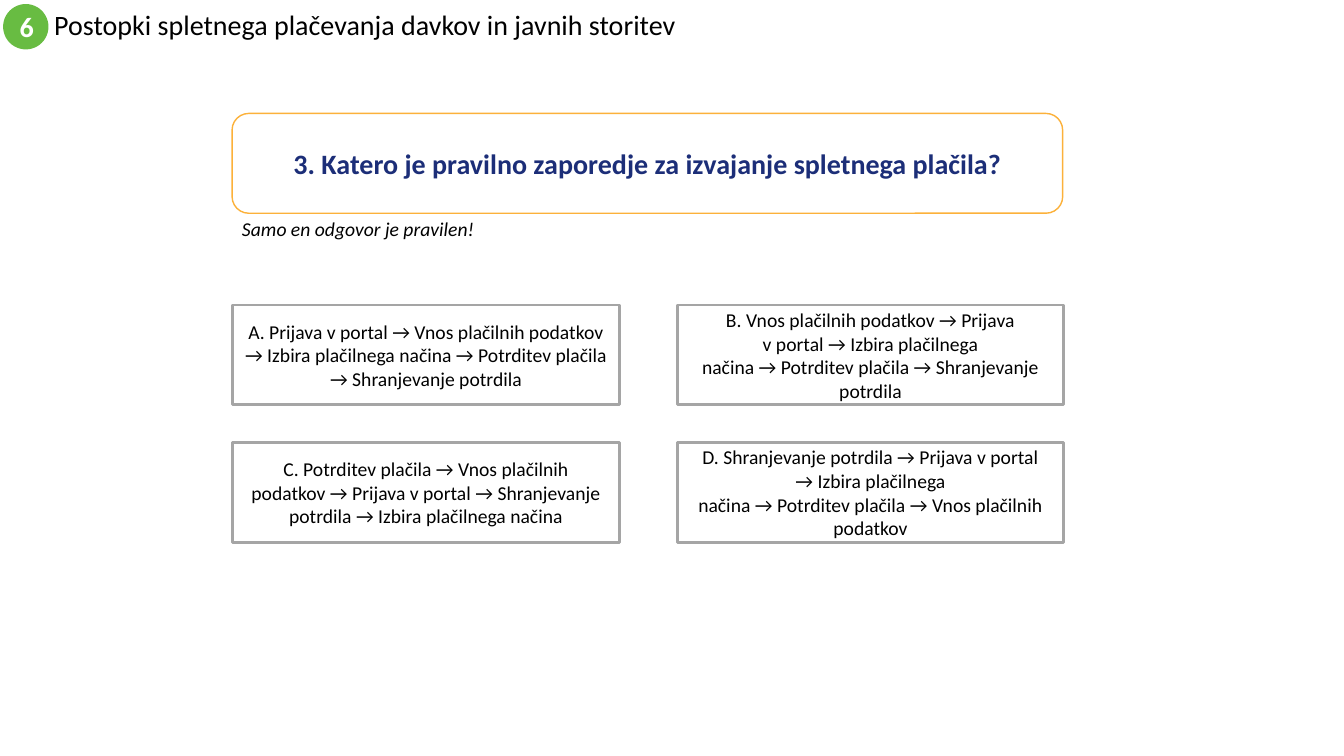
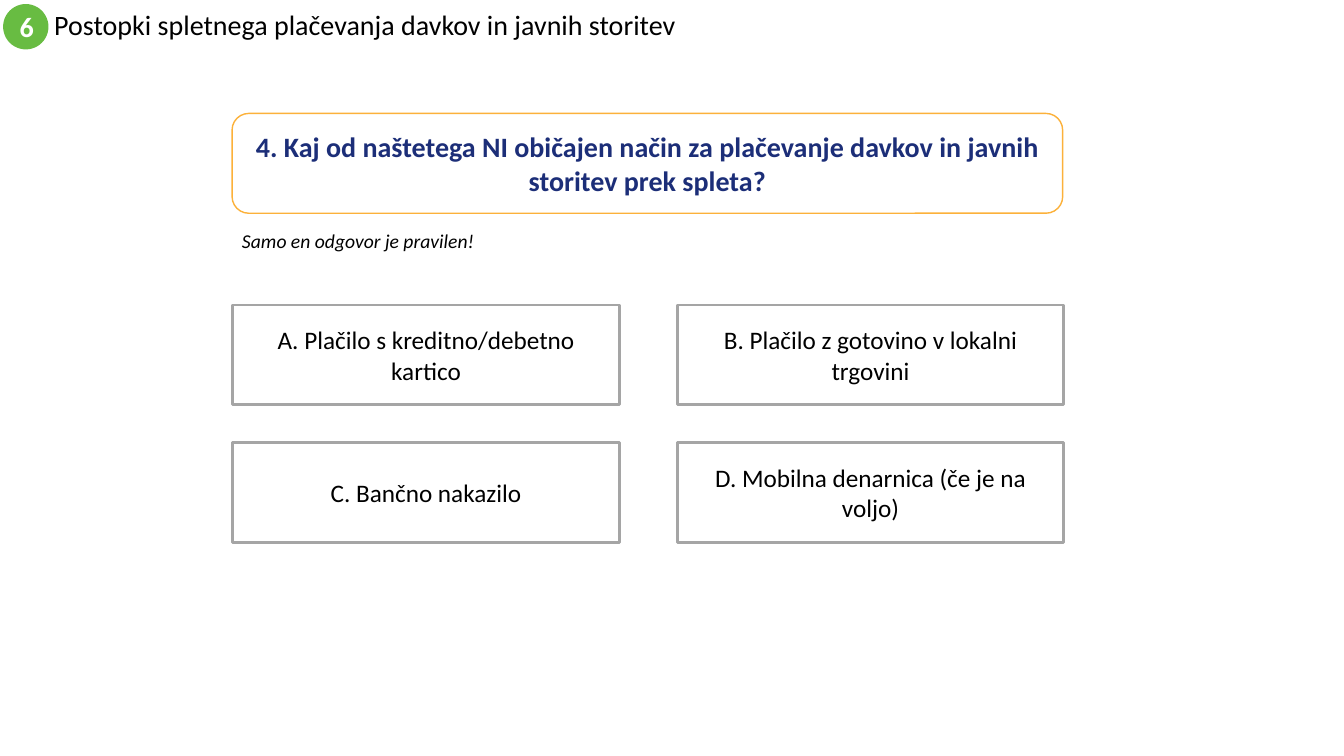
from dataclasses import dataclass

from pptx import Presentation
from pptx.dml.color import RGBColor
from pptx.enum.shapes import MSO_SHAPE
from pptx.enum.text import MSO_ANCHOR, MSO_AUTO_SIZE, PP_ALIGN
from pptx.shapes.autoshape import Shape
from pptx.slide import Slide
from pptx.util import Pt

OVAL, RECT, ROUND = MSO_SHAPE.OVAL, MSO_SHAPE.RECTANGLE, MSO_SHAPE.ROUNDED_RECTANGLE
MIDDLE, TOP = MSO_ANCHOR.MIDDLE, MSO_ANCHOR.TOP
LEFT, CENTER = PP_ALIGN.LEFT, PP_ALIGN.CENTER
FIXED, GROW = MSO_AUTO_SIZE.NONE, MSO_AUTO_SIZE.SHAPE_TO_FIT_TEXT

FONT = "Calibri"
BLACK, WHITE, NAVY = "000000", "FFFFFF", "1C2E78"
GREEN, AMBER, GRAY = "68BC42", "FCB13A", "A5A5A5"

TITLE = "Postopki spletnega plačevanja davkov in javnih storitev"
HINT = "Samo en odgovor je pravilen!"
TIE, HARD = "~", chr(160)
COLS = 2


@dataclass(frozen=True)
class Box:
    """Place and size in points."""
    left: float
    top: float
    width: float
    height: float

    def lengths(self) -> tuple[Pt, Pt, Pt, Pt]:
        """Give the four values as lengths."""
        return Pt(self.left), Pt(self.top), Pt(self.width), Pt(self.height)


@dataclass(frozen=True)
class Style:
    """Look of a text."""
    size: float
    color: str = BLACK
    bold: bool = False
    italic: bool = False
    align: PP_ALIGN = CENTER
    anchor: MSO_ANCHOR = MIDDLE


@dataclass(frozen=True)
class Quiz:
    """One question with its answers, where a tie marks a hard space."""
    ask: str
    hint: Box
    size: float
    answers: tuple[str, ...]


HEAD_BOX = Box(31.5, 2.9, 576, 32.4)
BADGE_BOX = Box(2.2, 2.9, 32.4, 32.4)
ASK_BOX = Box(165.8, 81, 593.3, 71.3)
GRID = Box(166.3, 217.9, 276, 71.3)
STEP_X, STEP_Y = 317.5, 98.2

HEAD = Style(20, align=LEFT)
BADGE = Style(20, WHITE, bold=True)
ASK = Style(20, NAVY, bold=True)
NOTE = Style(14, italic=True, align=LEFT, anchor=TOP)

QUIZZES = (
    Quiz(
        "3. Katero je pravilno zaporedje za izvajanje spletnega plačila?",
        Box(165.8, 151.5, 199.4, 24.5),
        14,
        (
            "A. Prijava v~portal → Vnos~plačilnih podatkov → Izbira plačilnega načina "
            "→ Potrditev~plačila → Shranjevanje potrdila",
            "B. Vnos~plačilnih podatkov →~Prijava v~portal~→~Izbira plačilnega "
            "načina~→~Potrditev~plačila~→ Shranjevanje potrdila",
            "C.~Potrditev~plačila~→ Vnos~plačilnih podatkov~→~Prijava "
            "v~portal~→~Shranjevanje potrdila~→ Izbira plačilnega načina",
            "D.~Shranjevanje potrdila~→ Prijava v~portal →~Izbira plačilnega "
            "načina~→~Potrditev~plačila~→ Vnos~plačilnih podatkov",
        ),
    ),
    Quiz(
        "4. Kaj~od naštetega~NI običajen način za plačevanje davkov in javnih "
        "storitev prek spleta?",
        Box(165.8, 160, 220.3, 24.5),
        18,
        (
            "A. Plačilo s kreditno/debetno kartico",
            "B. Plačilo z gotovino v lokalni trgovini",
            "C. Bančno nakazilo",
            "D. Mobilna denarnica (če je na voljo)",
        ),
    ),
)


def paint(code: str) -> RGBColor:
    """Turn a hex string into a colour."""
    return RGBColor.from_string(code)


def write(shape: Shape, text: str, style: Style) -> None:
    """Fill a shape with styled text."""
    frame = shape.text_frame
    frame.text = text.replace(TIE, HARD)
    frame.word_wrap = True
    frame.auto_size = FIXED
    frame.vertical_anchor = style.anchor
    for para in frame.paragraphs:
        para.alignment = style.align
        for run in para.runs:
            font = run.font
            font.name, font.size = FONT, Pt(style.size)
            font.bold, font.italic = style.bold, style.italic
            font.color.rgb = paint(style.color)


def panel(slide: Slide, kind: MSO_SHAPE, box: Box, text: str, style: Style,
          fill: str = WHITE, edge: str = "", width: float = 1) -> None:
    """Draw a filled shape with text."""
    shape = slide.shapes.add_shape(kind, *box.lengths())
    shape.shadow.inherit = False
    shape.fill.solid()
    shape.fill.fore_color.rgb = paint(fill)
    if edge:
        shape.line.color.rgb = paint(edge)
        shape.line.width = Pt(width)
    else:
        shape.line.fill.background()
    write(shape, text, style)


def header(slide: Slide) -> None:
    """Set the title and the unit badge."""
    title = slide.shapes.title
    title.left, title.top, title.width, title.height = HEAD_BOX.lengths()
    write(title, TITLE, HEAD)
    title.text_frame.paragraphs[0].line_spacing = 0.9
    panel(slide, OVAL, BADGE_BOX, "6", BADGE, GREEN)


def cell(index: int) -> Box:
    """Find the place of an answer in the grid."""
    row, col = divmod(index, COLS)
    return Box(GRID.left + col * STEP_X, GRID.top + row * STEP_Y,
               GRID.width, GRID.height)


def draw(slide: Slide, quiz: Quiz) -> None:
    """Draw one question slide."""
    header(slide)
    panel(slide, ROUND, ASK_BOX, quiz.ask, ASK, edge=AMBER)
    hint = slide.shapes.add_textbox(*quiz.hint.lengths())
    write(hint, HINT, NOTE)
    hint.text_frame.auto_size = GROW
    for index, answer in enumerate(quiz.answers):
        panel(slide, RECT, cell(index), answer, Style(quiz.size), edge=GRAY, width=2)


def main() -> None:
    """Build and save the deck."""
    deck = Presentation()
    deck.slide_width, deck.slide_height = Pt(960), Pt(540)
    layout = deck.slide_layouts.get_by_name("Title Only")
    for quiz in QUIZZES:
        draw(deck.slides.add_slide(layout), quiz)
    deck.save("out.pptx")


if __name__ == "__main__":
    main()
